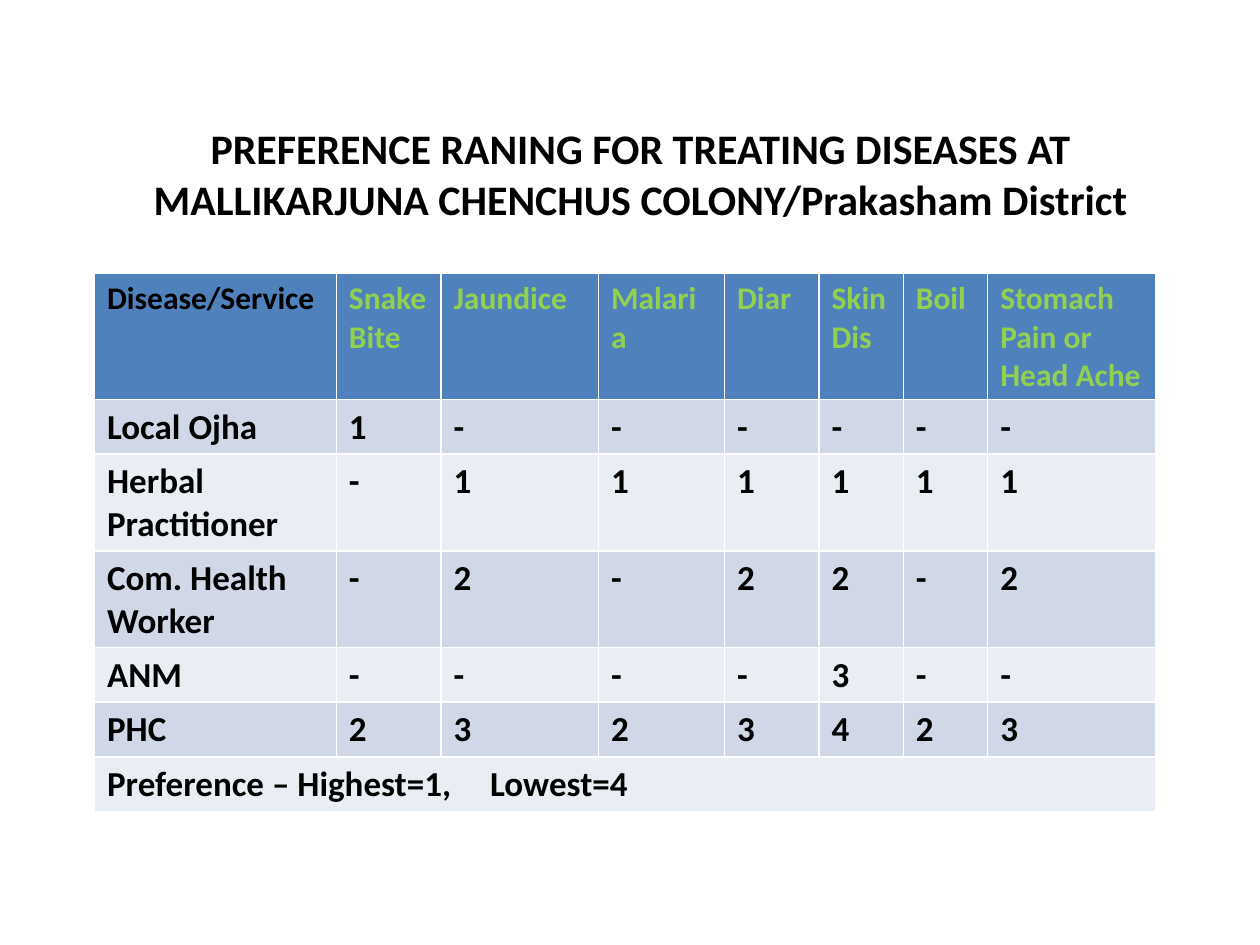
from dataclasses import dataclass

from lxml import etree
from pptx import Presentation
from pptx.dml.color import RGBColor
from pptx.enum.text import MSO_ANCHOR, PP_ALIGN
from pptx.oxml.ns import qn
from pptx.util import Inches, Pt

MIDDLE = MSO_ANCHOR.MIDDLE
CENTER = PP_ALIGN.CENTER


@dataclass(frozen=True)
class Theme:
    font: str = "Calibri"
    text: RGBColor = RGBColor(0x00, 0x00, 0x00)
    disease: RGBColor = RGBColor(0x92, 0xD0, 0x50)
    header_fill: RGBColor = RGBColor(0x4F, 0x81, 0xBD)
    band_fills: tuple = (RGBColor(0xD0, 0xD8, 0xE8), RGBColor(0xE9, 0xED, 0xF4))
    title_size: int = 24
    header_size: int = 18
    body_size: int = 20


THEME = Theme()
TITLE = ("PREFERENCE RANING FOR TREATING DISEASES AT "
         "MALLIKARJUNA CHENCHUS COLONY/Prakasham District")
COLUMN_WIDTHS = (1.92, 0.83, 1.25, 1, 0.75, 0.67, 0.67, 1.33)
ROW_HEIGHT = 0.41
LEGEND_TAB = 3.04
HEADERS = ("Disease/Service", "Snake Bite", "Jaundice", "Malaria", "Diar",
           "Skin Dis", "Boil", "Stomach Pain or Head Ache")
RANKINGS = (
    ("Local Ojha", "1------"),
    ("Herbal Practitioner", "-111111"),
    ("Com. Health Worker", "-2-22-2"),
    ("ANM", "----3--"),
    ("PHC", "2323423"),
)
LEGEND = "Preference – Highest=1,\tLowest=4"


def write_text(text_frame, text, size, color):
    paragraph = text_frame.paragraphs[0]
    run = paragraph.add_run()
    run.text = text
    formats = {"name": THEME.font, "size": Pt(size), "bold": True}
    for name, value in formats.items():
        setattr(run.font, name, value)
    run.font.color.rgb = color
    return paragraph


def fill_cell(cell, text, size, color, fill):
    cell.fill.solid()
    cell.fill.fore_color.rgb = fill
    return write_text(cell.text_frame, text, size, color)


def add_tab_stop(paragraph, position):
    properties = paragraph._p.get_or_add_pPr()
    tab_list = etree.SubElement(properties, qn("a:tabLst"))
    etree.SubElement(tab_list, qn("a:tab"), pos=str(Inches(position)), algn="l")


def add_title(slide, left, top, width, height):
    shape = slide.shapes.add_textbox(left, top, width, height)
    text_frame = shape.text_frame
    for name, value in {"word_wrap": True, "vertical_anchor": MIDDLE}.items():
        setattr(text_frame, name, value)
    paragraph = write_text(text_frame, TITLE, THEME.title_size, THEME.text)
    paragraph.alignment = CENTER


def add_ranking_table(slide, left, top, width, height):
    row_count = len(RANKINGS) + 2
    column_count = len(HEADERS)
    shape = slide.shapes.add_table(row_count, column_count, left, top, width, height)
    table = shape.table
    for column, column_width in zip(table.columns, COLUMN_WIDTHS):
        column.width = Inches(column_width)
    for row in table.rows:
        row.height = Inches(ROW_HEIGHT)
    shape.height = height

    for index, header in enumerate(HEADERS):
        color = THEME.disease if index else THEME.text
        fill_cell(table.cell(0, index), header, THEME.header_size, color,
                  THEME.header_fill)

    for row_index, (service, ranks) in enumerate(RANKINGS, 1):
        fill = THEME.band_fills[(row_index - 1) % 2]
        for column_index, text in enumerate((service, *ranks)):
            fill_cell(table.cell(row_index, column_index), text,
                      THEME.body_size, THEME.text, fill)

    last_row = row_count - 1
    legend_cell = table.cell(last_row, 0)
    legend_cell.merge(table.cell(last_row, column_count - 1))
    paragraph = fill_cell(legend_cell, LEGEND, THEME.body_size, THEME.text,
                          THEME.band_fills[1])
    add_tab_stop(paragraph, LEGEND_TAB)


def main():
    presentation = Presentation()
    presentation.slide_width = Inches(10)
    presentation.slide_height = Inches(7.5)
    slide = presentation.slides.add_slide(presentation.slide_layouts[6])
    add_title(slide, Inches(0.67), Inches(0.75), Inches(8.83), Inches(1.25))
    add_ranking_table(slide, Inches(0.75), Inches(2.17), Inches(8.42), Inches(4.27))
    presentation.save("out.pptx")


if __name__ == "__main__":
    main()
